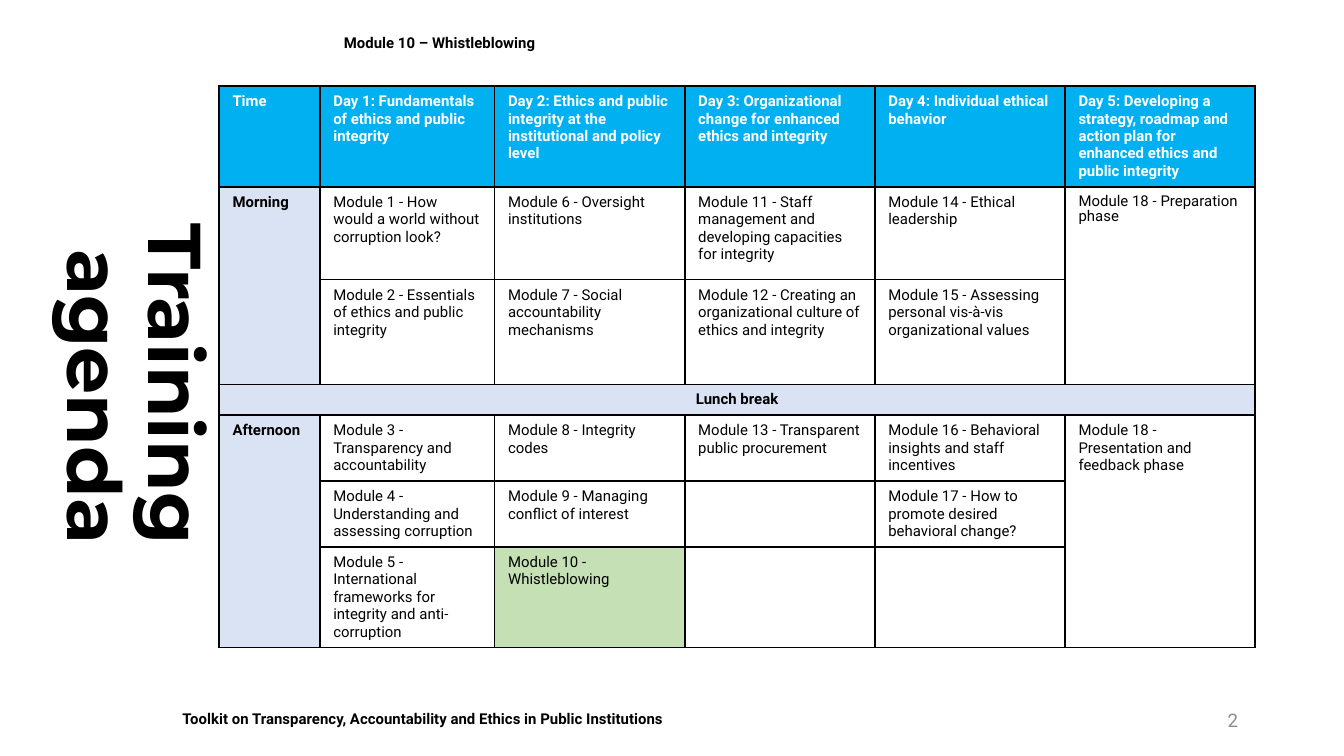
from typing import NamedTuple, Optional

from lxml.etree import SubElement
from pptx import Presentation
from pptx.dml.color import RGBColor
from pptx.enum.shapes import MSO_SHAPE
from pptx.enum.text import MSO_ANCHOR, PP_ALIGN
from pptx.oxml.ns import qn
from pptx.util import Inches, Pt

BLACK = RGBColor(0x00, 0x00, 0x00)
WHITE = RGBColor(0xFF, 0xFF, 0xFF)
GRAY = RGBColor(0x8C, 0x8C, 0x8C)
HEADER_BLUE = RGBColor(0x00, 0xB0, 0xF0)
PALE_BLUE = RGBColor(0xDA, 0xE3, 0xF3)
CURRENT_GREEN = RGBColor(0xC5, 0xE0, 0xB4)

BODY_FONT = "Roboto"
TITLE_FONT = "Montserrat"
SLIDE_WIDTH = 10
SLIDE_HEIGHT = SLIDE_WIDTH * 9 / 16
TABLE_WIDTH = 7.71
TIME_WIDTH = 0.75
DAY_1_WIDTH = 1.3
DAY_WIDTH = (TABLE_WIDTH - TIME_WIDTH - DAY_1_WIDTH) / 4
COLUMN_WIDTHS = [TIME_WIDTH, DAY_1_WIDTH] + [DAY_WIDTH] * 4
ROW_HEIGHTS = [0.75, 0.69, 0.78, 0.23, 0.49, 0.49, 0.75]


class Style(NamedTuple):
    size: float = 8
    color: RGBColor = BLACK
    bold: bool = False
    font: str = BODY_FONT
    align: PP_ALIGN = PP_ALIGN.LEFT
    line_spacing: Optional[float] = None


class Label(NamedTuple):
    text: str
    left: float
    top: float
    width: float
    height: float
    style: Style


class AgendaCell(NamedTuple):
    text: str = ""
    style: Style = Style()
    fill: Optional[RGBColor] = None
    rows: int = 1
    columns: int = 1


BOLD = Style(bold=True)
HEADER = Style(color=WHITE, bold=True)
EMPTY = AgendaCell()

LABELS = [
    Label("2", 7.06, 5.21, 2.25, 0.3, Style(10, GRAY, align=PP_ALIGN.RIGHT)),
    Label("Module 10 – Whistleblowing", 2.46, 0.1, 6.85, 0.44, BOLD),
]
TITLE = Label("Training agenda", 0.31, 1.5, 1.35, 2.55,
              Style(40, bold=True, font=TITLE_FONT, align=PP_ALIGN.RIGHT, line_spacing=0.9))
FOOTER = Label("Toolkit on Transparency, Accountability and Ethics in Public Institutions",
               1.26, 5.23, 7.17, 0.24, BOLD)

HEADINGS = [
    "Time",
    "Day 1: Fundamentals of ethics and public integrity",
    "Day 2: Ethics and public integrity at the institutional and policy level",
    "Day 3: Organizational change for enhanced ethics and integrity",
    "Day 4: Individual ethical behavior",
    "Day 5: Developing a strategy, roadmap and action plan for enhanced ethics and public integrity",
]
# None marks a cell covered by a merged neighbor.
AGENDA = [
    [AgendaCell(heading, HEADER, HEADER_BLUE) for heading in HEADINGS],
    [AgendaCell("Morning", BOLD, PALE_BLUE, rows=2),
     AgendaCell("Module 1 - How would a world without corruption look?"),
     AgendaCell("Module 6 - Oversight institutions"),
     AgendaCell("Module 11 - Staff management and developing capacities for integrity"),
     AgendaCell("Module 14 - Ethical leadership"),
     AgendaCell("Module 18 - Preparation phase", Style(line_spacing=0.9), rows=2)],
    [None,
     AgendaCell("Module 2 - Essentials of ethics and public integrity"),
     AgendaCell("Module 7 - Social accountability mechanisms"),
     AgendaCell("Module 12 - Creating an organizational culture of ethics and integrity"),
     AgendaCell("Module 15 - Assessing personal vis-à-vis organizational values"),
     None],
    [AgendaCell("Lunch break", Style(bold=True, align=PP_ALIGN.CENTER), PALE_BLUE, columns=6)]
    + [None] * 5,
    [AgendaCell("Afternoon", BOLD, PALE_BLUE, rows=3),
     AgendaCell("Module 3 - Transparency and accountability"),
     AgendaCell("Module 8 - Integrity codes"),
     AgendaCell("Module 13 - Transparent public procurement"),
     AgendaCell("Module 16 - Behavioral insights and staff incentives"),
     AgendaCell("Module 18 - Presentation and feedback phase", rows=3)],
    [None,
     AgendaCell("Module 4 - Understanding and assessing corruption"),
     AgendaCell("Module 9 - Managing conflict of interest"),
     EMPTY,
     AgendaCell("Module 17 - How to promote desired behavioral change?"),
     None],
    [None,
     AgendaCell("Module 5 - International frameworks for integrity and anti-corruption"),
     AgendaCell("Module 10 - Whistleblowing", fill=CURRENT_GREEN),
     EMPTY,
     EMPTY,
     None],
]


def write(text_frame, text: str, style: Style) -> None:
    paragraph = text_frame.paragraphs[0]
    if text:
        paragraph.text = text
    paragraph.alignment = style.align
    paragraph.line_spacing = style.line_spacing
    font = paragraph.font
    font.name = style.font
    font.size = Pt(style.size)
    font.bold = style.bold
    font.color.rgb = style.color


def add_label(slide, label: Label):
    box = slide.shapes.add_textbox(Inches(label.left), Inches(label.top),
                                   Inches(label.width), Inches(label.height))
    text_frame = box.text_frame
    text_frame.word_wrap = True
    text_frame.vertical_anchor = MSO_ANCHOR.MIDDLE
    write(text_frame, label.text, label.style)
    return text_frame


def add_title(slide) -> None:
    """Add the heading that reads from top to bottom."""
    text_frame = add_label(slide, TITLE)
    text_frame.margin_left = text_frame.margin_right = 0
    text_frame.margin_top = text_frame.margin_bottom = 0
    text_frame._txBody.bodyPr.set("vert", "vert")


def add_footer(slide) -> None:
    shape = slide.shapes.add_shape(MSO_SHAPE.RECTANGLE, Inches(FOOTER.left), Inches(FOOTER.top),
                                   Inches(FOOTER.width), Inches(FOOTER.height))
    shape.shadow.inherit = False
    shape.fill.solid()
    shape.fill.fore_color.rgb = WHITE
    shape.line.fill.background()
    shape.text_frame.word_wrap = True
    shape.text_frame.vertical_anchor = MSO_ANCHOR.TOP
    write(shape.text_frame, FOOTER.text, FOOTER.style)


def add_borders(cell) -> None:
    properties = cell._tc.get_or_add_tcPr()
    for side in ("lnL", "lnR", "lnT", "lnB"):
        line = SubElement(properties, qn(f"a:{side}"), w=str(Pt(1)))
        fill = SubElement(line, qn("a:solidFill"))
        SubElement(fill, qn("a:srgbClr"), val=str(BLACK))


def fill_cell(cell, content: AgendaCell) -> None:
    if content.fill is None:
        cell.fill.background()
    else:
        cell.fill.solid()
        cell.fill.fore_color.rgb = content.fill
    cell.margin_bottom = Inches(0.03)
    write(cell.text_frame, content.text, content.style)


def add_agenda(slide) -> None:
    frame = slide.shapes.add_table(len(ROW_HEIGHTS), len(COLUMN_WIDTHS), Inches(1.63), Inches(0.64),
                                   Inches(TABLE_WIDTH), Inches(sum(ROW_HEIGHTS)))
    table = frame.table
    table.first_row = table.horz_banding = False
    for column, width in zip(table.columns, COLUMN_WIDTHS):
        column.width = Inches(width)
    for row, height in zip(table.rows, ROW_HEIGHTS):
        row.height = Inches(height)
    for r, contents in enumerate(AGENDA):
        for c, content in enumerate(contents):
            cell = table.cell(r, c)
            add_borders(cell)
            fill_cell(cell, content or EMPTY)
            if content and content.rows * content.columns > 1:
                cell.merge(table.cell(r + content.rows - 1, c + content.columns - 1))


def main() -> None:
    presentation = Presentation()
    presentation.slide_width = Inches(SLIDE_WIDTH)
    presentation.slide_height = Inches(SLIDE_HEIGHT)
    slide = presentation.slides.add_slide(presentation.slide_layouts[6])
    add_footer(slide)
    add_title(slide)
    for label in LABELS:
        add_label(slide, label)
    add_agenda(slide)
    presentation.save("out.pptx")


if __name__ == "__main__":
    main()
